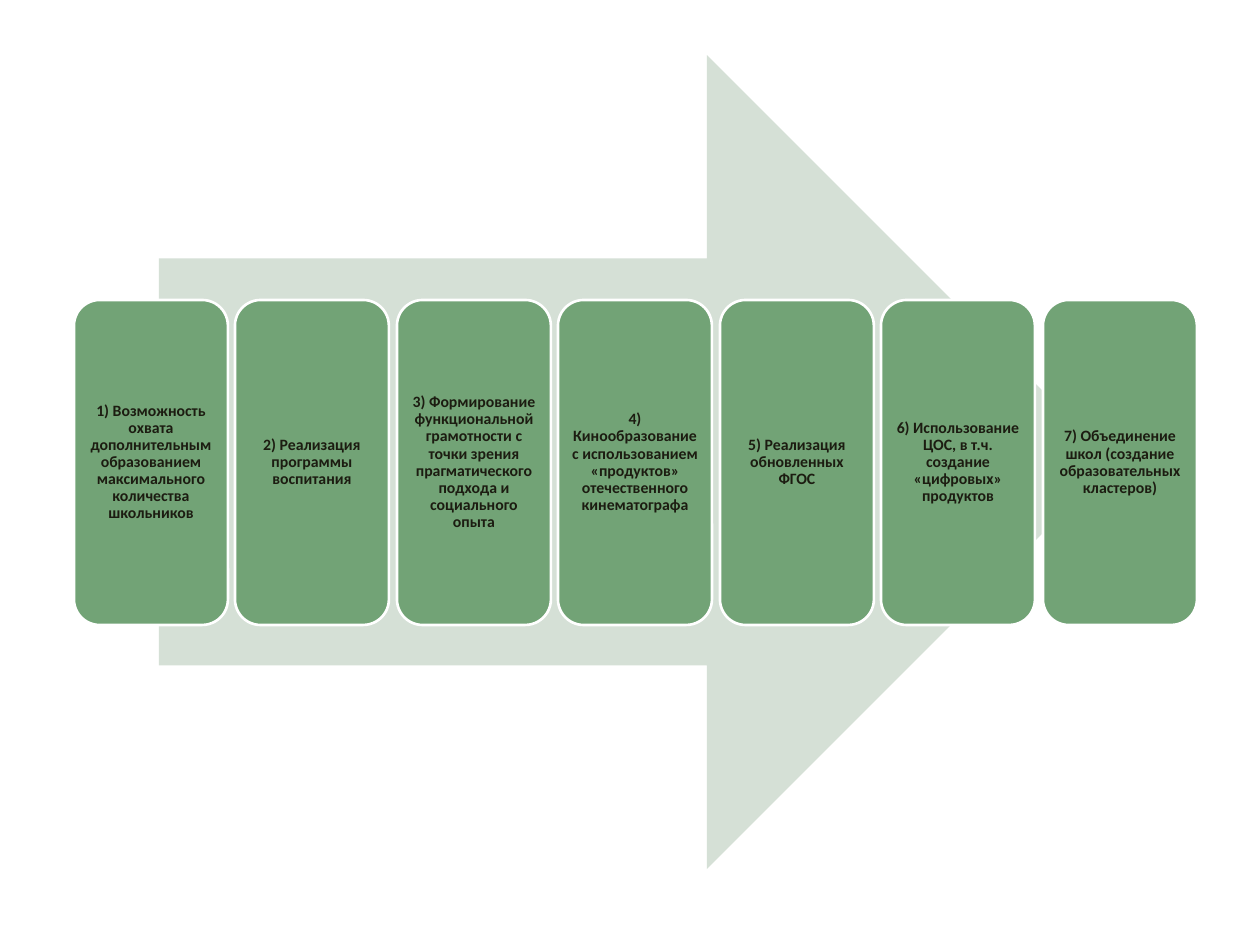
from pptx import Presentation
from pptx.dml.color import RGBColor
from pptx.enum.shapes import MSO_SHAPE
from pptx.enum.text import MSO_ANCHOR, PP_ALIGN
from pptx.util import Emu, Pt

COLORS = {"arrow": "D5E0D6", "step": "72A376", "outline": "FFFFFF", "text": "1C1C11"}
STEPS = [
    "1) Возможность охвата дополнительным образованием максимального количества школьников",
    "2) Реализация программы воспитания",
    "3) Формирование функциональной грамотности с точки зрения прагматического подхода и социального опыта",
    "4) Кинообразование с использованием «продуктов» отечественного кинематографа",
    "5) Реализация обновленных ФГОС",
    "6) Использование ЦОС, в т.ч. создание «цифровых» продуктов",
    "7) Объединение школ (создание образовательных кластеров)",
]
FIRST_LEFT, LAST_LEFT = 74, 1043
STEP_TOP, STEP_WIDTH, STEP_HEIGHT = 300, 154, 325
INSET = 5


def px(length):
    return Emu(round(length * 914400 / 126))


def add_filled(kind, left, top, width, height, color):
    shape = slide.shapes.add_shape(kind, px(left), px(top), px(width), px(height))
    shape.shadow.inherit = False
    shape.fill.solid()
    shape.fill.fore_color.rgb = RGBColor.from_string(COLORS[color])
    return shape


prs = Presentation()
prs.slide_width, prs.slide_height = px(1260), px(945)
slide = prs.slides.add_slide(prs.slide_layouts[6])

arrow = add_filled(MSO_SHAPE.RIGHT_ARROW, 159, 55, 955, 814, "arrow")
arrow.line.fill.background()

frame_format = {
    "word_wrap": True,
    "vertical_anchor": MSO_ANCHOR.MIDDLE,
    "margin_left": px(INSET),
    "margin_top": px(INSET),
    "margin_right": px(INSET),
    "margin_bottom": px(INSET),
}
paragraph_format = {"alignment": PP_ALIGN.CENTER, "line_spacing": 0.9}
font_format = {"name": "Calibri", "size": Pt(9), "bold": True}

for index, wording in enumerate(STEPS):
    left = FIRST_LEFT + (LAST_LEFT - FIRST_LEFT) * index // (len(STEPS) - 1)
    step = add_filled(MSO_SHAPE.ROUNDED_RECTANGLE, left, STEP_TOP, STEP_WIDTH, STEP_HEIGHT, "step")
    step.line.color.rgb = RGBColor.from_string(COLORS["outline"])
    step.line.width = Pt(1.5)

    frame = step.text_frame
    frame.text = wording
    paragraph = frame.paragraphs[0]
    font = paragraph.runs[0].font
    for target, values in (
        (frame, frame_format),
        (paragraph, paragraph_format),
        (font, font_format),
    ):
        for attribute, value in values.items():
            setattr(target, attribute, value)
    font.color.rgb = RGBColor.from_string(COLORS["text"])

prs.save("out.pptx")
